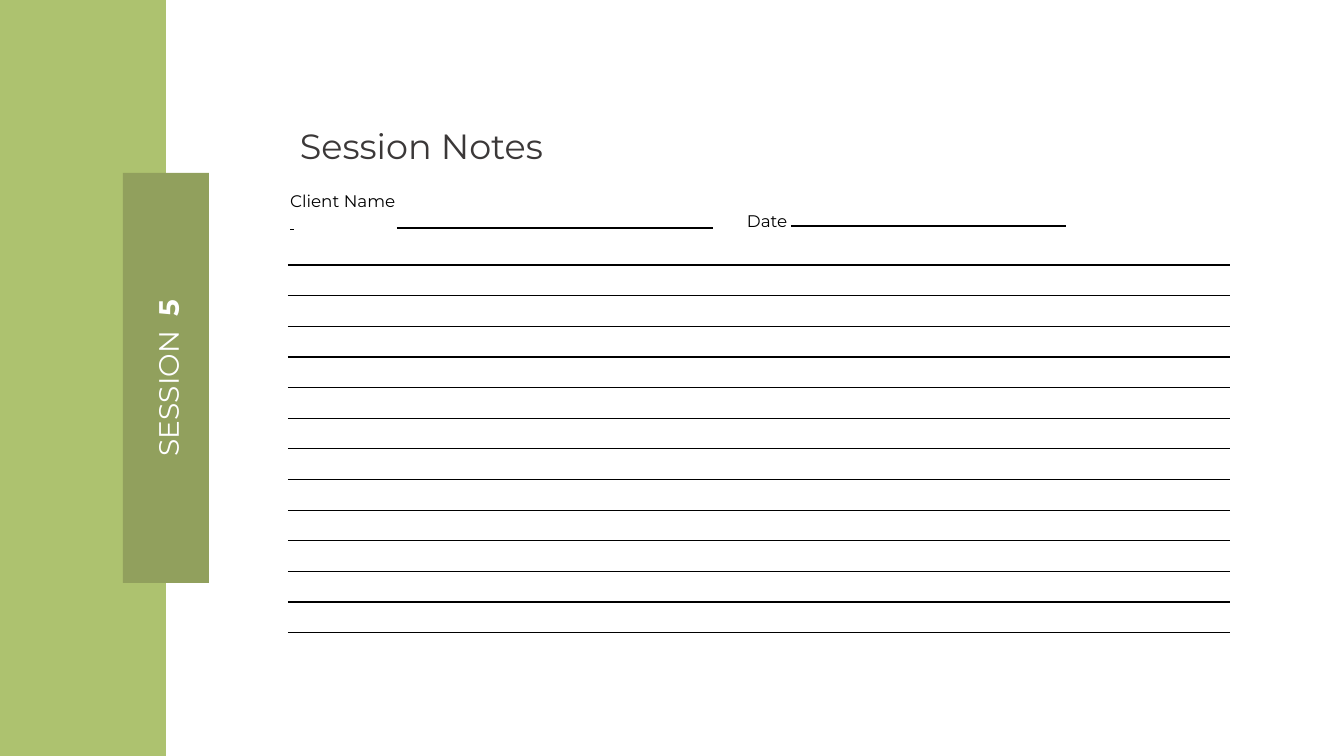
from dataclasses import dataclass

from lxml.etree import SubElement
from pptx import Presentation
from pptx.dml.color import RGBColor
from pptx.enum.shapes import MSO_CONNECTOR as Conn, MSO_SHAPE as Shape
from pptx.enum.text import MSO_ANCHOR as Anchor, PP_ALIGN as Align
from pptx.oxml.ns import qn
from pptx.slide import Slide
from pptx.util import Emu, Pt

PX = 914400 / 100.8
NBSP = chr(160)
NOTE_ROWS = 12


@dataclass(frozen=True)
class Theme:
    font: str = "Montserrat"
    paper: str = "FFFFFF"
    ink: str = "000000"
    heading: str = "3B3838"
    band: str = "ADC26F"
    tab: str = "91A05D"
    title_size: int = 25
    session_size: int = 20
    label_size: int = 12
    row_size: int = 10
    rule: int = 1


THEME = Theme()


@dataclass(frozen=True)
class Box:
    left: int
    top: int
    width: int
    height: int

    def emu(self) -> list[Emu]:
        return [px(v) for v in (self.left, self.top, self.width, self.height)]


@dataclass(frozen=True)
class Panel:
    box: Box
    color: str


@dataclass(frozen=True)
class Run:
    text: str
    format: dict[str, bool]


@dataclass(frozen=True)
class Label:
    box: Box
    runs: list[Run]
    size: int
    color: str
    frame: dict[str, object]
    align: Align = Align.LEFT
    rotation: int = 0


@dataclass(frozen=True)
class Blank:
    """A line to write on."""
    left: int
    right: int
    y: int


TIGHT = dict(margin_left=0, margin_right=0, margin_top=0, margin_bottom=0)
FIELD = dict(TIGHT, word_wrap=True, vertical_anchor=Anchor.BOTTOM)

PANELS = [
    Panel(Box(0, 0, 166, 756), THEME.band),
    Panel(Box(123, 173, 86, 410), THEME.tab),
]
LABELS = [
    Label(Box(79, 356, 178, 44), [Run("SESSION  ", {}), Run("5", {"bold": True})],
          THEME.session_size, THEME.paper, {"word_wrap": False}, Align.CENTER, 270),
    Label(Box(290, 209, 108, 22), [Run("Client Name ", {}), Run(NBSP, {"underline": True})],
          THEME.label_size, THEME.ink, FIELD),
    Label(Box(747, 209, 45, 22), [Run("Date", {})],
          THEME.label_size, THEME.ink, FIELD),
    Label(Box(290, 120, 356, 52), [Run("Session Notes", {})],
          THEME.title_size, THEME.heading, {"word_wrap": True}),
]
BLANKS = [Blank(397, 713, 228), Blank(791, 1066, 226)]
NOTES = Box(288, 265, 942, 368)


def px(value: float) -> Emu:
    return Emu(round(value * PX))


def rgb(color: str) -> RGBColor:
    return RGBColor.from_string(color)


def apply(target: object, values: dict[str, object]) -> None:
    for name, value in values.items():
        setattr(target, name, value)


def add_panel(s: Slide, panel: Panel) -> None:
    sp = s.shapes.add_shape(Shape.RECTANGLE, *panel.box.emu())
    sp.shadow.inherit = False
    sp.fill.solid()
    sp.fill.fore_color.rgb = rgb(panel.color)
    sp.line.fill.background()


def add_label(s: Slide, label: Label) -> None:
    sp = s.shapes.add_textbox(*label.box.emu())
    sp.rotation = label.rotation
    tf = sp.text_frame
    apply(tf, label.frame)
    p = tf.paragraphs[0]
    p.alignment = label.align
    for run in label.runs:
        r = p.add_run()
        r.text = run.text
        apply(r.font, {"name": THEME.font, "size": Pt(label.size), **run.format})
        r.font.color.rgb = rgb(label.color)


def add_blank(s: Slide, blank: Blank) -> None:
    y = px(blank.y)
    line = s.shapes.add_connector(Conn.STRAIGHT, px(blank.left), y, px(blank.right), y)
    line.line.color.rgb = rgb(THEME.ink)
    line.line.width = Pt(THEME.rule)
    SubElement(line._element.spPr, qn("a:effectLst"))


def add_border(tc_pr, side: str, visible: bool) -> None:
    ln = SubElement(tc_pr, qn(f"a:{side}"), w=str(Pt(THEME.rule) if visible else 0))
    if visible:
        fill = SubElement(ln, qn("a:solidFill"))
        SubElement(fill, qn("a:srgbClr"), val=THEME.ink)
    else:
        SubElement(ln, qn("a:noFill"))


def add_notes(s: Slide, box: Box, rows: int) -> None:
    """Ruled writing area: a one-column table with horizontal borders only."""
    table = s.shapes.add_table(rows, 1, *box.emu()).table
    apply(table, {"first_row": False, "horz_banding": False})
    for row in table.rows:
        row.height = px(box.height / rows)
        cell = row.cells[0]
        apply(cell, TIGHT)
        tc_pr = cell._tc.get_or_add_tcPr()
        for side in ("lnL", "lnR", "lnT", "lnB"):
            add_border(tc_pr, side, side in ("lnT", "lnB"))
        cell.fill.solid()
        cell.fill.fore_color.rgb = rgb(THEME.paper)
        p = cell.text_frame.paragraphs[0]
        SubElement(p._p, qn("a:endParaRPr"), sz=str(THEME.row_size * 100))


def main() -> None:
    prs = Presentation()
    apply(prs, {"slide_width": px(1344), "slide_height": px(756)})
    s = prs.slides.add_slide(prs.slide_layouts[6])
    for panel in PANELS:
        add_panel(s, panel)
    for label in LABELS:
        add_label(s, label)
    for blank in BLANKS:
        add_blank(s, blank)
    add_notes(s, NOTES, NOTE_ROWS)
    prs.save("out.pptx")


if __name__ == "__main__":
    main()
